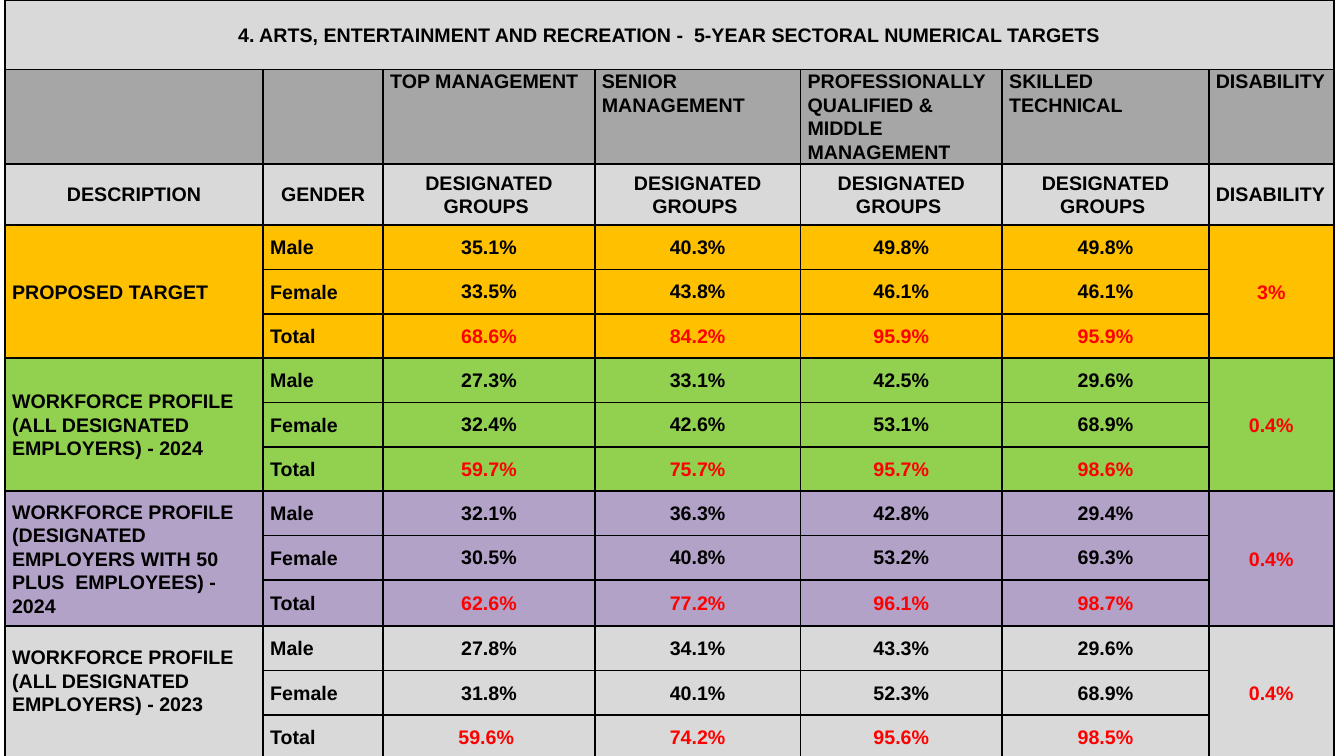
import dataclasses

import lxml.etree
import pptx
import pptx.dml.color
import pptx.enum.text
import pptx.oxml.ns
import pptx.table
import pptx.util

Inches = pptx.util.Inches
Align = pptx.enum.text.PP_ALIGN
Anchor = pptx.enum.text.MSO_ANCHOR

BLACK, RED = "000000", "FF0000"
LIGHT_GREY, DARK_GREY = "D9D9D9", "A6A6A6"
COLUMN_WIDTHS = (2.56, 1.19, 2.1, 2.04, 2, 2.05, 1.24)
TITLE_HEIGHT, LEVEL_HEIGHT, HEADING_HEIGHT = 0.69, 0.9, 0.61
GENDER_HEIGHT, TALL_HEIGHT = 0.44, 0.46
GENDERS = ("Male", "Female", "Total")
FIRST_GROUP_ROW = 3

TITLE = "4. ARTS, ENTERTAINMENT AND RECREATION -  5-YEAR SECTORAL NUMERICAL TARGETS"
LEVELS = (
    "",
    "",
    "TOP MANAGEMENT",
    "SENIOR MANAGEMENT",
    "PROFESSIONALLY QUALIFIED & MIDDLE MANAGEMENT",
    "SKILLED TECHNICAL",
    "DISABILITY",
)
HEADINGS = ("DESCRIPTION", "GENDER", *["DESIGNATED GROUPS "] * 4, "DISABILITY")


@dataclasses.dataclass(frozen=True)
class CellStyle:
    align: Align = Align.LEFT
    anchor: Anchor = Anchor.MIDDLE
    side: float = 0.07
    top: float = 0
    bottom: float = 0
    spacing: float = 1.07


LABEL = CellStyle()
CENTRED = CellStyle(align=Align.CENTER)
LEVEL = CellStyle(anchor=Anchor.TOP)
TIGHT = CellStyle(align=Align.CENTER, side=0.01, top=0.01, spacing=1.0)
RAISED = CellStyle(bottom=0.24)


@dataclasses.dataclass(frozen=True)
class Group:
    description: str
    fill: str
    disability: str
    shares: tuple[str, str, str]
    label_style: CellStyle = LABEL
    share_style: CellStyle = TIGHT
    total_height: float = GENDER_HEIGHT


GROUPS = (
    Group("PROPOSED TARGET", "FFC000", "3%", (
        "35.1%|40.3%|49.8%|49.8%",
        "33.5%|43.8%|46.1%|46.1%",
        "68.6%|84.2%|95.9%|95.9%",
    )),
    Group("WORKFORCE PROFILE (ALL DESIGNATED EMPLOYERS) - 2024", "92D050", "0.4%", (
        "27.3%|33.1%|42.5%|29.6%",
        "32.4%|42.6%|53.1%|68.9%",
        "59.7%|75.7%|95.7%|98.6%",
    )),
    Group(
        "WORKFORCE PROFILE (DESIGNATED EMPLOYERS WITH 50 PLUS  EMPLOYEES) - 2024",
        "B3A2C7", "0.4%", (
            "32.1%|36.3%|42.8%|29.4%",
            "30.5%|40.8%|53.2%|69.3%",
            "62.6%|77.2%|96.1%|98.7%",
        ), total_height=TALL_HEIGHT),
    Group("WORKFORCE PROFILE (ALL DESIGNATED EMPLOYERS) - 2023", LIGHT_GREY, "0.4%", (
        "27.8%|34.1%|43.3%|29.6%",
        "31.8%|40.1%|52.3%|68.9%",
        "59.6% |74.2%|95.6%|98.5%",
    ), label_style=RAISED, share_style=CENTRED),
)


def colour(value: str) -> pptx.dml.color.RGBColor:
    return pptx.dml.color.RGBColor.from_string(value)


def add_borders(cell: pptx.table._Cell) -> None:
    properties = cell._tc.get_or_add_tcPr()
    name = pptx.oxml.ns.qn
    for edge in ("a:lnL", "a:lnR", "a:lnT", "a:lnB"):
        line = lxml.etree.SubElement(properties, name(edge), w=str(pptx.util.Pt(1.5)))
        solid = lxml.etree.SubElement(line, name("a:solidFill"))
        lxml.etree.SubElement(solid, name("a:srgbClr"), val=BLACK)


def paint(cell: pptx.table._Cell, fill: str) -> None:
    add_borders(cell)
    cell.fill.solid()
    cell.fill.fore_color.rgb = colour(fill)


def write(cell: pptx.table._Cell, text: str, style: CellStyle, ink: str = BLACK) -> None:
    cell.vertical_anchor = style.anchor
    cell.margin_left = cell.margin_right = Inches(style.side)
    cell.margin_top = Inches(style.top)
    cell.margin_bottom = Inches(style.bottom)
    para = cell.text_frame.paragraphs[0]
    para.alignment = style.align
    para.line_spacing = style.spacing
    span = para.add_run()
    span.text = text
    span.font.name = "Arial"
    span.font.size = pptx.util.Pt(14)
    span.font.bold = True
    span.font.color.rgb = colour(ink)


def fill_headings(table: pptx.table.Table) -> None:
    last = len(COLUMN_WIDTHS) - 1
    table.cell(0, 0).merge(table.cell(0, last))
    write(table.cell(0, 0), TITLE, CENTRED)
    for column, (level, heading) in enumerate(zip(LEVELS, HEADINGS)):
        if level:
            write(table.cell(1, column), level, LEVEL)
        write(table.cell(2, column), heading, LABEL if column == last else CENTRED)


def fill_group(table: pptx.table.Table, group: Group, first_row: int) -> None:
    last_row = first_row + len(GENDERS) - 1
    last_column = len(COLUMN_WIDTHS) - 1
    for column in (0, last_column):
        table.cell(first_row, column).merge(table.cell(last_row, column))
    write(table.cell(first_row, 0), group.description, group.label_style)
    write(table.cell(first_row, last_column), group.disability, CENTRED, RED)
    for row, (gender, shares) in enumerate(zip(GENDERS, group.shares), first_row):
        write(table.cell(row, 1), gender, LABEL)
        ink = RED if gender == "Total" else BLACK
        for column, share in enumerate(shares.split("|"), 2):
            write(table.cell(row, column), share, group.share_style, ink)


def main() -> None:
    deck = pptx.Presentation()
    deck.slide_width, deck.slide_height = Inches(13.33), Inches(7.5)
    page = deck.slides.add_slide(deck.slide_layouts[6])

    heights = [TITLE_HEIGHT, LEVEL_HEIGHT, HEADING_HEIGHT]
    fills = [LIGHT_GREY, DARK_GREY, LIGHT_GREY]
    for group in GROUPS:
        heights += [GENDER_HEIGHT, GENDER_HEIGHT, group.total_height]
        fills += [group.fill] * len(GENDERS)

    frame = page.shapes.add_table(
        len(heights), len(COLUMN_WIDTHS), Inches(0.05), Inches(0),
        Inches(sum(COLUMN_WIDTHS)), Inches(sum(heights)))
    table = frame.table
    for column, width in zip(table.columns, COLUMN_WIDTHS):
        column.width = Inches(width)
    for row, height, fill in zip(table.rows, heights, fills):
        row.height = Inches(height)
        for cell in row.cells:
            paint(cell, fill)

    fill_headings(table)
    for index, group in enumerate(GROUPS):
        fill_group(table, group, FIRST_GROUP_ROW + index * len(GENDERS))
    deck.save("out.pptx")


if __name__ == "__main__":
    main()
